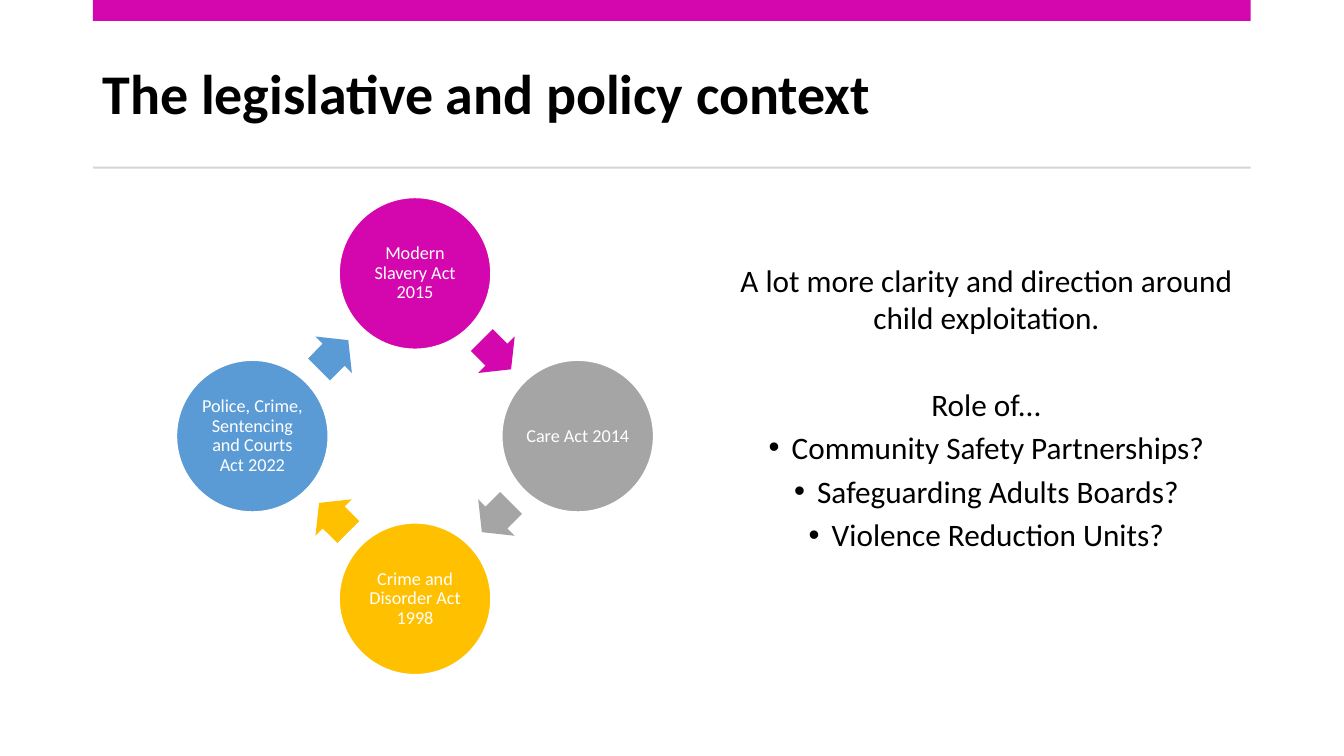
"""Build a slide on the legislative and policy context."""
from math import cos, radians, sin

from lxml.etree import SubElement
from pptx import Presentation
from pptx.dml.color import RGBColor
from pptx.enum.shapes import MSO_SHAPE
from pptx.enum.text import MSO_ANCHOR, PP_ALIGN
from pptx.oxml.ns import qn
from pptx.util import Cm, Pt

PINK, WHITE, BLACK = "D406AD", "FFFFFF", "000000"
LEFT, WIDTH = 2.34, 29.18
HUB_X, HUB_Y = 10.46, 10.99
ACTS = [
    ("Modern Slavery Act 2015", PINK),
    ("Care Act 2014", "A5A5A5"),
    ("Crime and Disorder Act 1998", "FFC000"),
    ("Police, Crime, Sentencing and Courts Act 2022", "5B9BD5"),
]
ROLES = [
    "Community Safety Partnerships?",
    "Safeguarding Adults Boards?",
    "Violence Reduction Units?",
]


def tint(target, code):
    """Give a fill or line a solid colour."""
    target.solid()
    target.fore_color.rgb = RGBColor.from_string(code)


def put(item, vals):
    """Set each named value on an item."""
    for name, val in vals.items():
        setattr(item, name, val)


def add_shape(slide, kind, box, code):
    """Add a flat shape with no outline."""
    shape = slide.shapes.add_shape(kind, *map(Cm, box))
    shape.shadow.inherit = False
    tint(shape.fill, code)
    shape.line.fill.background()
    return shape


def add_text(slide, box, anchor):
    """Add a wrapping text box and return its frame."""
    frame = slide.shapes.add_textbox(*map(Cm, box)).text_frame
    put(frame, {"word_wrap": True, "vertical_anchor": anchor})
    return frame


def write(para, text, size, code, bold=False, **form):
    """Fill a paragraph with styled text."""
    para.text = text
    put(para, form)
    put(para.font, {"name": "Calibri", "size": Pt(size), "bold": bold})
    tint(para.font.fill, code)


def add_dot(para):
    """Give a paragraph a hanging round bullet."""
    props = para._p.get_or_add_pPr()
    props.set("marL", str(Cm(0.58)))
    props.set("indent", str(-Cm(0.58)))
    SubElement(props, qn("a:buFont"), typeface="Arial")
    SubElement(props, qn("a:buChar"), char="•")


def around(turn, reach, wide, high):
    """Return a box centred at an angle around the hub."""
    ang = radians(turn)
    mid_x, mid_y = HUB_X + reach * sin(ang), HUB_Y - reach * cos(ang)
    return mid_x - wide / 2, mid_y - high / 2, wide, high


def add_act(slide, text, code, turn):
    """Add a circle for an act and the arrow that follows it."""
    disc = add_shape(slide, MSO_SHAPE.OVAL, around(turn, 4.1, 3.86, 3.86), code)
    tint(disc.line.fill, WHITE)
    disc.line.width = Pt(2)
    frame = disc.text_frame
    sides = ("left", "top", "right", "bottom")
    put(frame, {f"margin_{side}": Cm(0.05) for side in sides})
    put(frame, {"word_wrap": True, "vertical_anchor": MSO_ANCHOR.MIDDLE})
    write(frame.paragraphs[0], text, 13, WHITE,
          alignment=PP_ALIGN.CENTER, line_spacing=0.9)
    arrow = add_shape(slide, MSO_SHAPE.RIGHT_ARROW,
                      around(turn + 45, 2.9, 1.04, 1.3), code)
    arrow.rotation = turn + 45
    arrow.adjustments[0] = 0.6


def add_body(slide):
    """Add the remarks and the list of roles."""
    frame = add_text(slide, (18.19, 6.45, 13.34, 10.85), MSO_ANCHOR.TOP)
    lines = [
        ("A lot more clarity and direction around child exploitation.", 0),
        ("Role of...", 35),
    ] + [(role, 4.4) for role in ROLES]
    for num, (text, gap) in enumerate(lines):
        para = frame.add_paragraph() if num else frame.paragraphs[0]
        if text in ROLES:
            add_dot(para)
        write(para, text, 22.3, BLACK,
              alignment=PP_ALIGN.CENTER, space_before=Pt(gap))


def main():
    """Build and save the slide."""
    deck = Presentation()
    put(deck, {"slide_width": Cm(33.87), "slide_height": Cm(19.05)})
    slide = deck.slides.add_slide(deck.slide_layouts[6])
    title = add_text(slide, (LEFT, 0.94, WIDTH, 3), MSO_ANCHOR.MIDDLE)
    write(title.paragraphs[0], "The legislative and policy context",
          40, BLACK, True, line_spacing=0.9)
    add_shape(slide, MSO_SHAPE.RECTANGLE, (LEFT, 0, WIDTH, 0.53), PINK)
    add_shape(slide, MSO_SHAPE.RECTANGLE, (LEFT, 4.2, WIDTH, 0.05), "D5D5D5")
    add_body(slide)
    for num, (text, code) in enumerate(ACTS):
        add_act(slide, text, code, num * 360 / len(ACTS))
    deck.save("out.pptx")


if __name__ == "__main__":
    main()
